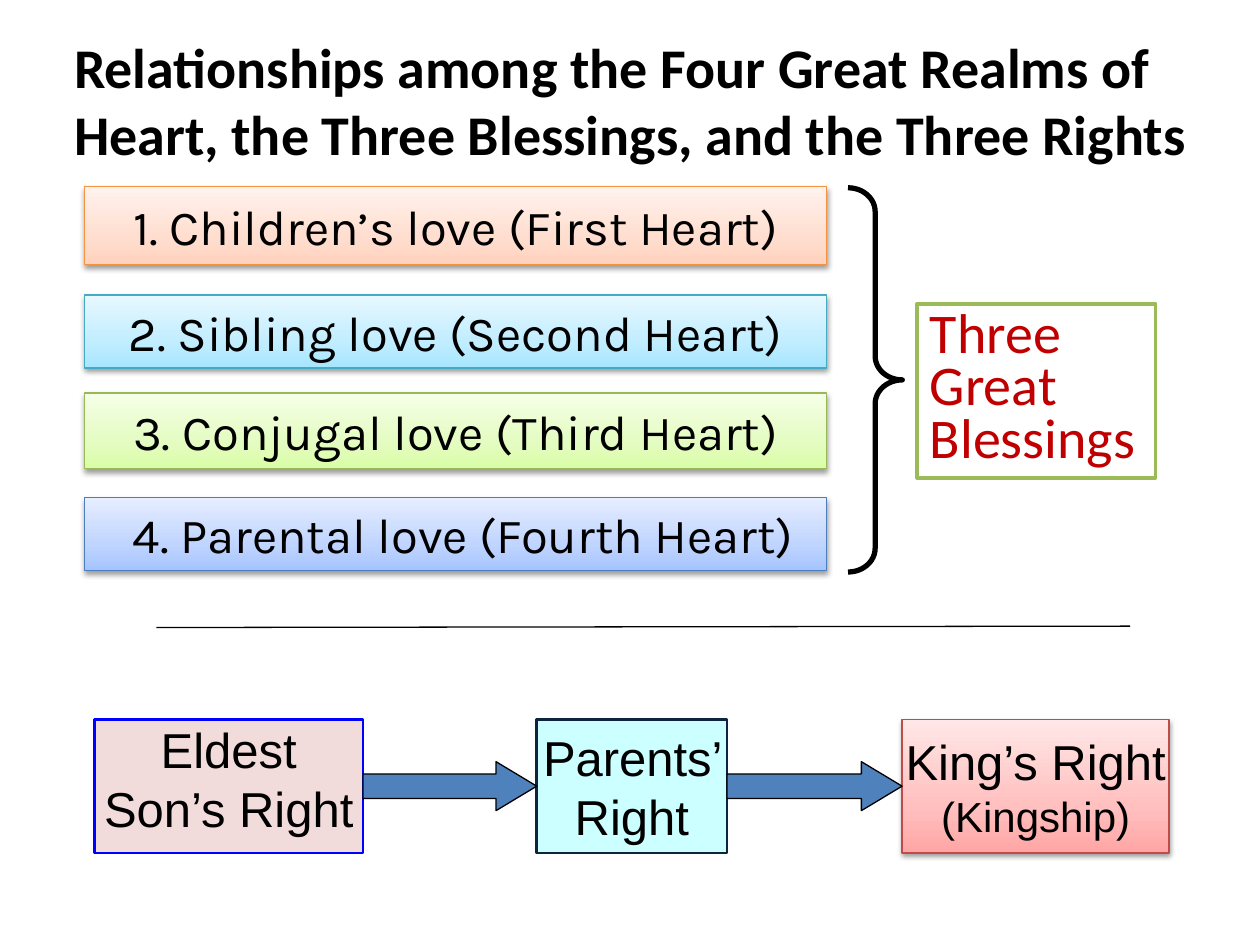
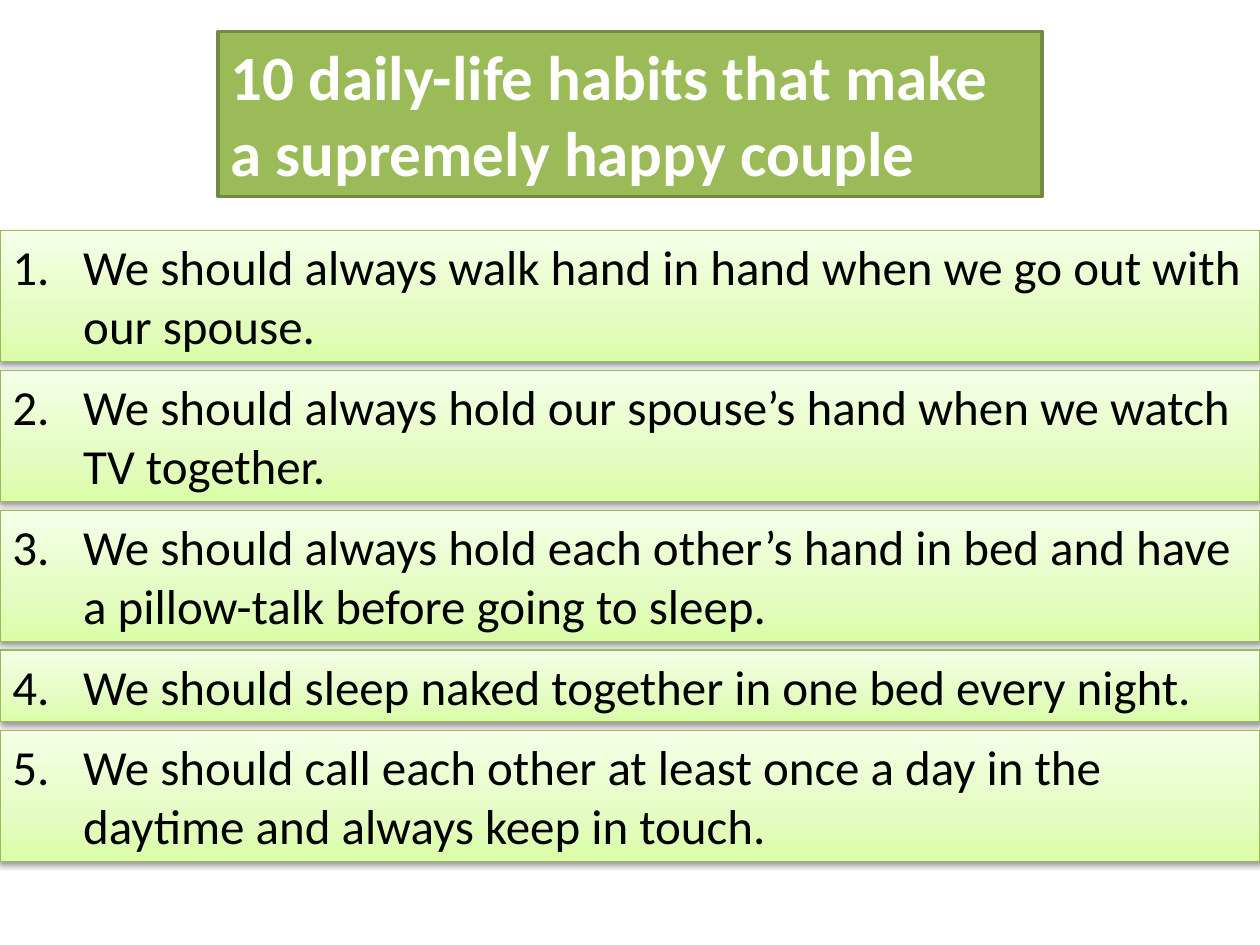
from copy import deepcopy

from lxml.etree import SubElement
from pptx import Presentation
from pptx.dml.color import RGBColor
from pptx.enum.shapes import MSO_CONNECTOR as Connector, MSO_SHAPE as Shape
from pptx.enum.text import MSO_ANCHOR as Anchor, PP_ALIGN as Align
from pptx.oxml.ns import qn
from pptx.util import Pt

BLACK = RGBColor(0, 0, 0)
WHITE = RGBColor(255, 255, 255)
RED = RGBColor(0xC0, 0, 0)
GREEN = RGBColor(0x9B, 0xBB, 0x59)
DARK_GREEN = RGBColor(0x73, 0x8A, 0x42)
ARROW_BLUE = RGBColor(0x4F, 0x81, 0xBD)
PINK = RGBColor(0xF2, 0xDC, 0xDB)
BRIGHT_BLUE = RGBColor(0, 0, 0xFF)
AQUA = RGBColor(0xCC, 0xFF, 0xFF)
NAVY = RGBColor(0x0F, 0x24, 0x3E)


def palette(*codes):
    """Line colour followed by gradient colours from bottom to top."""
    return [RGBColor.from_string(code) for code in codes]


ORANGE_GLOW = palette("F69240", "FFD2BD", "FFDED0", "FFF2ED")
CYAN_GLOW = palette("46AAC5", "A7E6FF", "C1EDFF", "E7F8FF")
GREEN_GLOW = palette("98B955", "DAFDA7", "E4FCC2", "F5FFE7")
BLUE_GLOW = palette("4B7EBC", "A4C4FF", "BFD4FF", "E6EEFF")
RED_GLOW = palette("BF4C48", "FFA6A5", "FFC0BF", "FFE7E7")

SLIDE_WIDTH, SLIDE_HEIGHT = 720, 540
NO_INSETS = (0, 0, 0, 0)
DEFAULT_INSETS = (7.2, 3.6, 7.2, 3.6)

HEARTS = [
    ("1. Children’s love (First Heart)", 106.6, 44.6, ORANGE_GLOW, NO_INSETS),
    ("2. Sibling love (Second Heart)", 168.5, 41.8, CYAN_GLOW, NO_INSETS),
    ("3. Conjugal love (Third Heart)", 224.6, 43.2, GREEN_GLOW, NO_INSETS),
    ("4. Parental love (Fourth Heart)", 284.4, 41.8, BLUE_GLOW, (8.6, 0, 0, 0)),
]
HABITS = [
    ("We should always walk hand in hand when we go out with our spouse.", 2),
    ("We should always hold our spouse’s hand when we watch TV together.", 2),
    ("We should always hold each other’s hand in bed and have "
     "a pillow-talk before going to sleep.", 2),
    ("We should sleep naked together in one bed every night.", 1),
    ("We should call each other at least once a day in the daytime "
     "and always keep in touch.", 2),
]
ROW_HEIGHTS = {1: 41, 2: 74.9}
ROW_GAP = 5


def add_box(slide, left, top, width, height, line, fill=None, weight=0.75, kind=Shape.RECTANGLE):
    shape = slide.shapes.add_shape(kind, Pt(left), Pt(top), Pt(width), Pt(height))
    shape.shadow.inherit = False
    if fill:
        shape.fill.solid()
        shape.fill.fore_color.rgb = fill
    else:
        shape.fill.background()
    shape.line.color.rgb = line
    shape.line.width = Pt(weight)
    return shape


def add_glow_box(slide, left, top, width, height, glow):
    """A softly shaded box with a drop shadow."""
    line, *colors = glow
    shape = add_box(slide, left, top, width, height, line)
    shape.fill.gradient()
    shape.fill.gradient_angle = 90
    properties = shape._element.spPr
    stop_list = properties.find(qn("a:gradFill")).find(qn("a:gsLst"))
    stop_list.insert(1, deepcopy(stop_list[0]))
    for stop, position, color in zip(shape.fill.gradient_stops, (0, 0.35, 1), colors):
        stop.position = position
        stop.color.rgb = color

    shadow = SubElement(properties.find(qn("a:effectLst")), qn("a:outerShdw"),
                        blurRad=str(Pt(3.1)), dist=str(Pt(1.6)), dir="5400000", rotWithShape="0")
    shade = SubElement(shadow, qn("a:srgbClr"), val=str(BLACK))
    SubElement(shade, qn("a:alpha"), val="38000")
    return shape


def write(shape, text, size, font, color=BLACK, bold=False, align=Align.LEFT,
          anchor=Anchor.MIDDLE, insets=DEFAULT_INSETS, wrap=True):
    frame = shape.text_frame
    frame.text = text
    frame.word_wrap = wrap
    frame.vertical_anchor = anchor
    frame.margin_left, frame.margin_top, frame.margin_right, frame.margin_bottom = map(Pt, insets)
    for paragraph in frame.paragraphs:
        paragraph.alignment = align
        for run in paragraph.runs:
            run.font.size = Pt(size)
            run.font.name = font
            run.font.bold = bold
            run.font.color.rgb = color
    return frame


def number_paragraph(paragraph, number, indent=40.5):
    properties = paragraph._p.get_or_add_pPr()
    properties.set("marL", str(Pt(indent)))
    properties.set("indent", str(-Pt(indent)))
    SubElement(properties, qn("a:buFont"), typeface="+mj-lt")
    SubElement(properties, qn("a:buAutoNum"), type="arabicPeriod", startAt=str(number))


def add_divider(slide, x1, y1, x2, y2):
    divider = slide.shapes.add_connector(Connector.STRAIGHT, Pt(x1), Pt(y1), Pt(x2), Pt(y2))
    divider.line.color.rgb = BLACK
    divider.line.width = Pt(0.75)
    SubElement(divider._element.spPr, qn("a:effectLst"))


def add_arrow(slide, start, end, middle, thickness=28):
    arrow = add_box(slide, start, middle - thickness / 2, end - start, thickness,
                    BLACK, ARROW_BLUE, kind=Shape.RIGHT_ARROW)
    arrow.adjustments[0] = 0.5
    arrow.adjustments[1] = 0.83


def add_rights(slide):
    """The three rights in a row, joined by arrows."""
    top, height = 411.1, 76.3
    eldest = add_box(slide, 54, top, 153.4, height, BRIGHT_BLUE, PINK, 1.5)
    parents = add_box(slide, 306.7, top, 108.7, height, NAVY, AQUA, 1.5)
    king = add_glow_box(slide, 515.5, top, 152.6, height, RED_GLOW)
    style = dict(size=28, font="Arial", align=Align.CENTER, insets=NO_INSETS)
    write(eldest, "Eldest Son’s Right", anchor=Anchor.TOP, **style)
    write(parents, "Parents’ Right", **style)
    frame = write(king, "King’s Right\n(Kingship)", wrap=False, **style)
    frame.paragraphs[1].runs[0].font.size = Pt(24)
    for start, end in ((207.4, 306.7), (415.4, 515.5)):
        add_arrow(slide, start, end, top + height / 2)


def build_relationships(slide):
    for text, top, height, glow, insets in HEARTS:
        bar = add_glow_box(slide, 48.2, top, 424.1, height, glow)
        write(bar, text, 28, "Karla", align=Align.CENTER, insets=insets)
    add_divider(slide, 89.3, 358.6, 645.8, 357.8)

    brace = add_box(slide, 484.6, 107.3, 31, 219.6, BLACK, weight=3, kind=Shape.RIGHT_BRACE)
    brace.adjustments[0] = 0.44
    brace.adjustments[1] = 0.5

    add_rights(slide)
    blessings = add_box(slide, 524.2, 173.5, 136.1, 99.4, GREEN, weight=2.25)
    frame = write(blessings, "Three Great Blessings", 32, "Calibri", RED)
    frame.paragraphs[0].line_spacing = Pt(30)

    title = slide.shapes.add_textbox(Pt(35.3), Pt(15.1), Pt(652.3), Pt(85))
    write(title, "Relationships among the Four Great Realms of Heart, "
          "the Three Blessings, and the Three Rights", 32, "Calibri", bold=True, anchor=Anchor.TOP)


def build_habits(slide):
    title = add_box(slide, 124.6, 18, 470.9, 94.3, DARK_GREEN, GREEN, 2)
    write(title, "10 daily-life habits that make a supremely happy couple",
          36, "Calibri", WHITE, bold=True, anchor=Anchor.TOP)
    top = 131.8
    for number, (text, lines) in enumerate(HABITS, 1):
        height = ROW_HEIGHTS[lines]
        row = add_glow_box(slide, 0, top, SLIDE_WIDTH, height, GREEN_GLOW)
        frame = write(row, text, 28, "Calibri", anchor=Anchor.TOP)
        number_paragraph(frame.paragraphs[0], number)
        top += height + ROW_GAP


def main():
    presentation = Presentation()
    presentation.slide_width = Pt(SLIDE_WIDTH)
    presentation.slide_height = Pt(SLIDE_HEIGHT)
    blank = presentation.slide_layouts[6]
    for build in (build_relationships, build_habits):
        build(presentation.slides.add_slide(blank))
    presentation.save("out.pptx")


if __name__ == "__main__":
    main()
